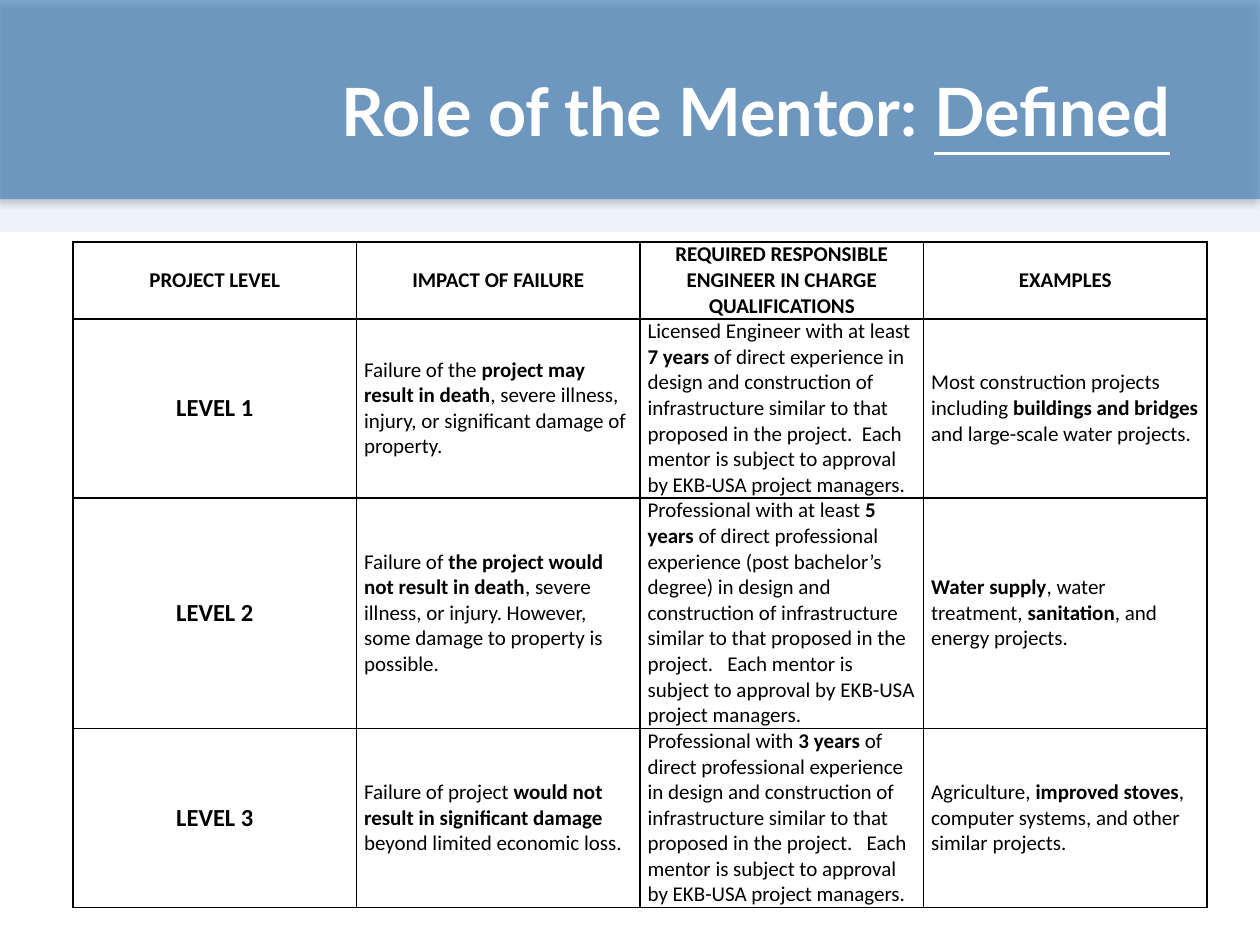
from lxml import etree
from pptx import Presentation
from pptx.dml.color import RGBColor
from pptx.enum.shapes import MSO_SHAPE
from pptx.enum.text import MSO_ANCHOR, PP_ALIGN
from pptx.oxml.ns import qn
from pptx.util import Inches, Pt

RECTANGLE = MSO_SHAPE.RECTANGLE
MIDDLE = MSO_ANCHOR.MIDDLE
CENTER, LEFT = PP_ALIGN.CENTER, PP_ALIGN.LEFT

DEEP_BLUE = RGBColor(0x09, 0x5A, 0xA6)
PALE_BLUE = RGBColor(0xB5, 0xCD, 0xE4)
BLACK = RGBColor(0, 0, 0)
WHITE = RGBColor(0xFF, 0xFF, 0xFF)

BOLD_MARK = "**"
COLUMN_WIDTH = 2.25
ROW_HEIGHTS = [0.55, 1.26, 1.38, 1.26]
LEVELS = [
    ["PROJECT LEVEL", "IMPACT OF FAILURE",
     "REQUIRED RESPONSIBLE ENGINEER IN CHARGE QUALIFICATIONS", "EXAMPLES"],
    ["LEVEL 1",
     "Failure of the **project may result in death**, severe illness, injury, "
     "or significant damage of property.",
     "Licensed Engineer with at least **7 years **of direct experience in "
     "design and construction of infrastructure similar to that proposed in "
     "the project.  Each mentor is subject to approval by EKB-USA project managers.",
     "Most construction projects including **buildings and bridges **and "
     "large-scale water projects."],
    ["LEVEL 2",
     "Failure of **the project would not result in death**, severe illness, "
     "or injury. However, some damage to property is possible.",
     "Professional with at least **5 years** of direct professional experience "
     "(post bachelor’s degree) in design and construction of infrastructure "
     "similar to that proposed in the project.   Each mentor is subject to "
     "approval by EKB-USA project managers.",
     "**Water supply**, water treatment, **sanitation**, and energy projects."],
    ["LEVEL 3",
     "Failure of project **would not result in significant damage** beyond "
     "limited economic loss.",
     "Professional with **3 years** of direct professional experience in design "
     "and construction of infrastructure similar to that proposed in the "
     "project.   Each mentor is subject to approval by EKB-USA project managers.",
     "Agriculture, **improved stoves**, computer systems, and other similar projects."],
]


def add_band(slide, left, width, height, color, opacity):
    band = slide.shapes.add_shape(
        RECTANGLE, Inches(left), 0, Inches(width), Inches(height))
    band.shadow.inherit = False
    band.fill.solid()
    band.fill.fore_color.rgb = color
    band.line.fill.background()
    fill_color = band.fill._xPr.find(qn("a:solidFill"))[0]
    etree.SubElement(fill_color, qn("a:alpha"), val=str(opacity * 1000))
    return band


def add_drop_shadow(band):
    effects = band._element.spPr.find(qn("a:effectLst"))
    shadow = etree.SubElement(
        effects, qn("a:outerShdw"), blurRad=str(Pt(4)), dist=str(Pt(3)),
        dir=str(135 * 60000), algn="tr", rotWithShape="0")
    color = etree.SubElement(shadow, qn("a:srgbClr"), val=str(BLACK))
    etree.SubElement(color, qn("a:alpha"), val="40000")


def add_run(paragraph, text, font_name, size, color, bold):
    run = paragraph.add_run()
    run.text = text
    run.font.name = font_name
    run.font.size = Pt(size)
    run.font.color.rgb = color
    run.font.bold = bold
    return run


def add_title(slide):
    title = slide.shapes.add_textbox(Inches(2), Inches(0.25), Inches(8), Inches(1.25))
    frame = title.text_frame
    frame.word_wrap = True
    frame.vertical_anchor = MIDDLE
    heading = frame.paragraphs[0]
    heading.alignment = CENTER
    add_run(heading, "Role of the Mentor: ", "Lato", 38, WHITE, True)
    emphasis = add_run(heading, "Defined", "Lato", 38, WHITE, True)
    emphasis.font.underline = True


def add_borders(cell):
    properties = cell._tc.get_or_add_tcPr()
    for side in ("lnL", "lnR", "lnT", "lnB"):
        border = etree.SubElement(properties, qn(f"a:{side}"), w=str(Pt(1)))
        fill = etree.SubElement(border, qn("a:solidFill"))
        etree.SubElement(fill, qn("a:srgbClr"), val=str(BLACK))


def fill_cell(cell, text, size, is_label):
    add_borders(cell)
    cell.fill.background()
    cell.vertical_anchor = MIDDLE
    cell.margin_left = cell.margin_right = Inches(0.06)
    cell.margin_top = cell.margin_bottom = 0
    paragraph = cell.text_frame.paragraphs[0]
    paragraph.alignment = CENTER if is_label else LEFT
    for index, part in enumerate(text.split(BOLD_MARK)):
        if part:
            add_run(paragraph, part, "Calibri", size, BLACK,
                    is_label or index % 2 == 1)


def add_level_table(slide):
    column_count = len(LEVELS[0])
    table = slide.shapes.add_table(
        len(LEVELS), column_count, Inches(0.58), Inches(1.92),
        Inches(COLUMN_WIDTH * column_count), Inches(sum(ROW_HEIGHTS))).table
    table.horz_banding = False
    for column in table.columns:
        column.width = Inches(COLUMN_WIDTH)
    for row_index, (height, texts) in enumerate(zip(ROW_HEIGHTS, LEVELS)):
        table.rows[row_index].height = Inches(height)
        for column_index, text in enumerate(texts):
            is_header = row_index == 0
            is_level = column_index == 0 and not is_header
            fill_cell(table.cell(row_index, column_index), text,
                      14 if is_level else 12, is_header or is_level)


def main():
    presentation = Presentation()
    presentation.slide_width = Inches(10)
    presentation.slide_height = Inches(7.5)
    slide = presentation.slides.add_slide(presentation.slide_layouts[6])
    header_band = add_band(slide, 0, 10.01, 1.58, DEEP_BLUE, 59)
    add_drop_shadow(header_band)
    add_band(slide, -0.09, 10.09, 1.84, PALE_BLUE, 26)
    add_level_table(slide)
    add_title(slide)
    presentation.save("out.pptx")


if __name__ == "__main__":
    main()
